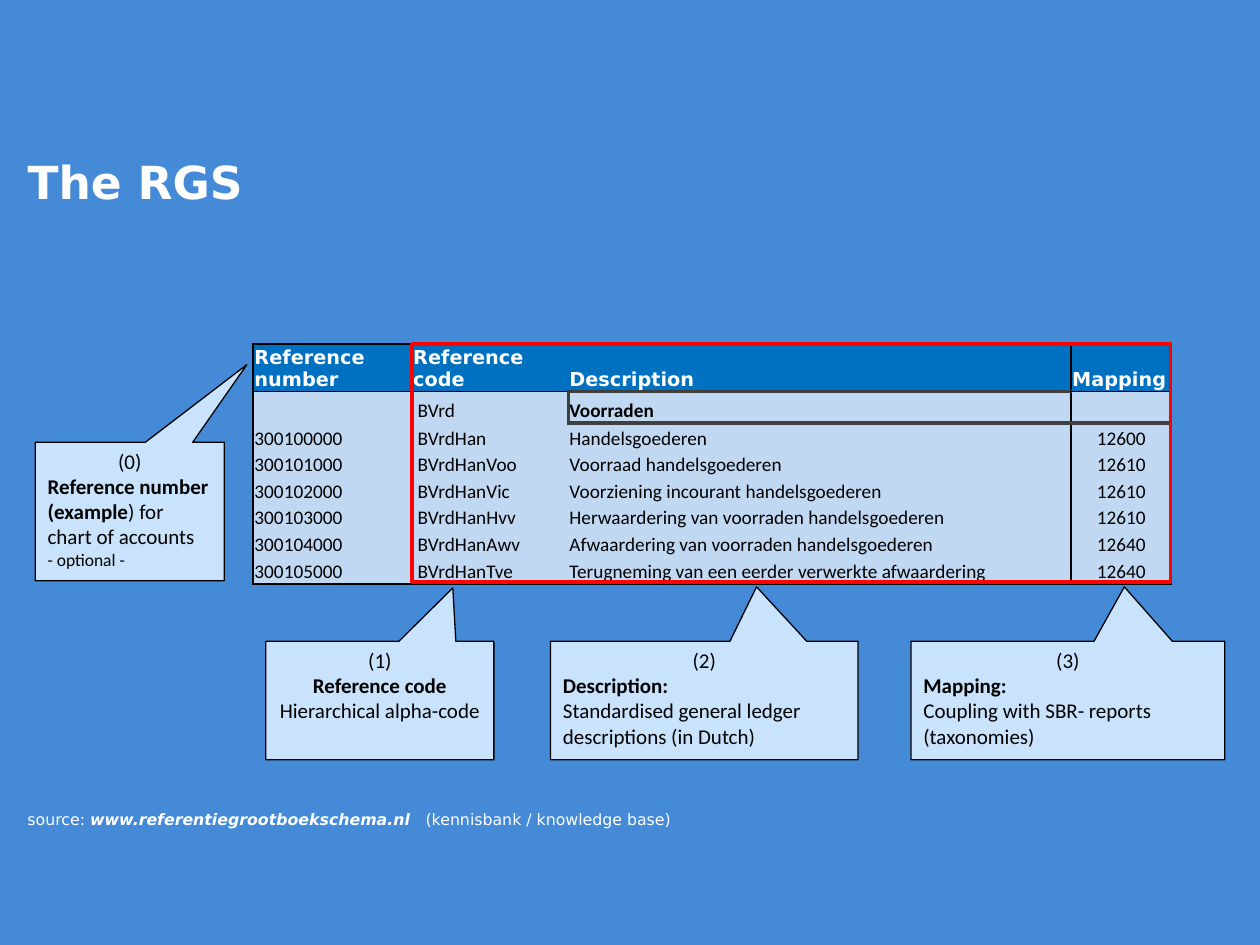
"""Build the RGS slide: a ledger table with callouts on a 100 by 75 grid."""
from dataclasses import dataclass
from typing import Optional

from lxml import etree
from pptx import Presentation, util as u
from pptx.dml.color import RGBColor
from pptx.enum import shapes, text
from pptx.oxml import ns

INK = {"back": "448AD7", "note": "C8E3FB", "head": "0070C0", "row": "C1D8F2",
       "black": "000000", "white": "FFFFFF", "grey": "3F3F3F", "red": "FF0000"}
SANS, BODY = "DejaVu Sans", "Calibri"
MID = text.PP_ALIGN.CENTER
LEFT = text.PP_ALIGN.LEFT


@dataclass
class Run:
    words: str
    bold: Optional[bool] = None
    slant: bool = False
    size: Optional[float] = None


@dataclass
class Para:
    runs: list[Run]
    align: int = LEFT


@dataclass
class Box:
    left: float
    top: float
    width: float
    height: float

    def place(self) -> list[int]:
        return [unit(n) for n in (self.left, self.top, self.width, self.height)]


@dataclass
class Note:
    box: Box
    tip: tuple[float, float]
    paras: list[Para]


def unit(count: float) -> int:
    return u.Inches(count / 10)


def tint(name: str) -> RGBColor:
    return RGBColor.from_string(INK[name])


def write(frame, paras: list[Para], *, size: float = 12, face: str = BODY,
          ink: str = "black", bold: bool = False,
          anchor=text.MSO_ANCHOR.TOP) -> None:
    frame.word_wrap = True
    frame.vertical_anchor = anchor
    for at, para in enumerate(paras):
        line = frame.paragraphs[0] if at == 0 else frame.add_paragraph()
        line.alignment = para.align
        for part in para.runs:
            run = line.add_run()
            run.text = part.words
            font = run.font
            font.name, font.size = face, u.Pt(part.size or size)
            font.bold = bold if part.bold is None else part.bold
            font.italic = part.slant
            font.color.rgb = tint(ink)


def label(slide, box: Box, paras: list[Para], **form):
    frame = slide.shapes.add_textbox(*box.place()).text_frame
    write(frame, paras, face=SANS, ink="white", **form)
    return frame


def shape(slide, kind, box: Box, line: str, width: float, fill: str = ""):
    item = slide.shapes.add_shape(kind, *box.place())
    item.shadow.inherit = False
    if fill:
        item.fill.solid()
        item.fill.fore_color.rgb = tint(fill)
    else:
        item.fill.background()
    item.line.color.rgb = tint(line)
    item.line.width = u.Pt(width)
    return item


def callout(slide, note: Note) -> None:
    item = shape(slide, shapes.MSO_SHAPE.RECTANGULAR_CALLOUT, note.box,
                 "black", 0.75, "note")
    item.adjustments[0], item.adjustments[1] = note.tip
    write(item.text_frame, note.paras)


UPRIGHT, LEVEL = {0, 1, 3, 4}, {0, 1, 8}
GREY = {("v", 1, 2), ("h", 1, 2), ("h", 2, 2), ("h", 2, 3)}


def border(cell, row: int, col: int) -> None:
    props = cell._tc.get_or_add_tcPr()
    sides = {"lnL": ("v", row, col), "lnR": ("v", row, col + 1),
             "lnT": ("h", row, col), "lnB": ("h", row + 1, col)}
    for tag, edge in sides.items():
        way, across, along = edge
        black = along in UPRIGHT if way == "v" else across in LEVEL
        grey = edge in GREY
        line = etree.SubElement(props, ns.qn(f"a:{tag}"),
                                w=str(u.Pt(2 if grey else 1)))
        if grey or black:
            fill = etree.SubElement(line, ns.qn("a:solidFill"))
            etree.SubElement(fill, ns.qn("a:srgbClr"),
                             val=INK["grey" if grey else "black"])
        else:
            etree.SubElement(line, ns.qn("a:noFill"))


def ledger(slide, box: Box, cols: list[float], rows: list[float],
           data: list[tuple]) -> None:
    table = slide.shapes.add_table(len(rows), len(cols), *box.place()).table
    table.horz_banding = False
    for col, width in enumerate(cols):
        table.columns[col].width = unit(width)
    for row, height in enumerate(rows):
        table.rows[row].height = unit(height)
        for col, words in enumerate(data[row]):
            cell, head = table.cell(row, col), row == 0
            border(cell, row, col)
            cell.fill.solid()
            cell.fill.fore_color.rgb = tint("head" if head else "row")
            cell.margin_left = unit(0.45 if col == 1 and not head else 0.1)
            cell.margin_right = cell.margin_top = unit(0.1)
            cell.margin_bottom = 0
            cell.vertical_anchor = text.MSO_ANCHOR.BOTTOM
            if words:
                align = MID if col == 3 and not head else LEFT
                write(cell.text_frame, [Para([Run(words)], align)], size=11,
                      face=SANS if head else BODY,
                      ink="white" if head else "black",
                      bold=head or words == "Voorraden",
                      anchor=text.MSO_ANCHOR.BOTTOM)
            else:
                line = cell.text_frame.paragraphs[0]._p
                etree.SubElement(line, ns.qn("a:endParaRPr"), sz="1100")


DATA = [
    ("Reference number", "Reference code", "Description", "Mapping"),
    ("", "BVrd", "Voorraden", ""),
    ("300100000", "BVrdHan", "Handelsgoederen", "12600"),
    ("300101000", "BVrdHanVoo", "Voorraad handelsgoederen", "12610"),
    ("300102000", "BVrdHanVic", "Voorziening incourant handelsgoederen", "12610"),
    ("300103000", "BVrdHanHvv", "Herwaardering van voorraden handelsgoederen", "12610"),
    ("300104000", "BVrdHanAwv", "Afwaardering van voorraden handelsgoederen", "12640"),
    ("300105000", "BVrdHanTve", "Terugneming van een eerder verwerkte afwaardering", "12640"),
]
TOP, HIGH = 50.9, 9.4
NOTES = [
    Note(Box(2.8, 35.1, 15, 11), (0.62, -1.06), [
        Para([Run("(0)")], MID),
        Para([Run("Reference number (example", True), Run(") for chart of accounts")]),
        Para([Run("- optional -", size=10)])]),
    Note(Box(21.1, TOP, 18.1, HIGH), (0.32, -0.95), [
        Para([Run("(1)")], MID), Para([Run("Reference code", True)], MID),
        Para([Run("Hierarchical alpha-code")], MID)]),
    Note(Box(43.7, TOP, 24.4, HIGH), (0.17, -0.96), [
        Para([Run("(2)")], MID), Para([Run("Description:", True)]),
        Para([Run("Standardised general ledger descriptions (in Dutch)")])]),
    Note(Box(72.3, TOP, 24.9, HIGH), (0.18, -0.96), [
        Para([Run("(3)")], MID), Para([Run("Mapping:", True)]),
        Para([Run("Coupling with SBR- reports (taxonomies)")])]),
]


def main() -> None:
    deck = Presentation()
    deck.slide_width, deck.slide_height = unit(100), unit(75)
    slide = deck.slides.add_slide(deck.slide_layouts[6])
    slide.background.fill.solid()
    slide.background.fill.fore_color.rgb = tint("back")
    for note in NOTES:
        callout(slide, note)
    source = label(slide, Box(1.2, 63.8, 54.7, 2.5), [Para([
        Run("source: "), Run("www.referentiegrootboekschema.nl", True, True),
        Run("\t(kennisbank / knowledge base)")])], size=9)
    props = source.paragraphs[0]._p.get_or_add_pPr()
    tabs = etree.SubElement(props, ns.qn("a:tabLst"))
    etree.SubElement(tabs, ns.qn("a:tab"), pos=str(unit(31.6)), algn="l")
    label(slide, Box(1.2, 10.2, 92.1, 8.4), [Para([Run("The RGS")])],
          size=26, bold=True, anchor=text.MSO_ANCHOR.MIDDLE)
    ledger(slide, Box(20.1, 27.3, 72.9, 19), [12.6, 12.4, 39.9, 8],
           [3.7, 2.5, 2.2, *[2.1] * 4, 2.2], DATA)
    shape(slide, shapes.MSO_SHAPE.RECTANGLE, Box(32.7, 27.3, 60.2, 18.9), "red", 2)
    deck.save("out.pptx")


if __name__ == "__main__":
    main()
